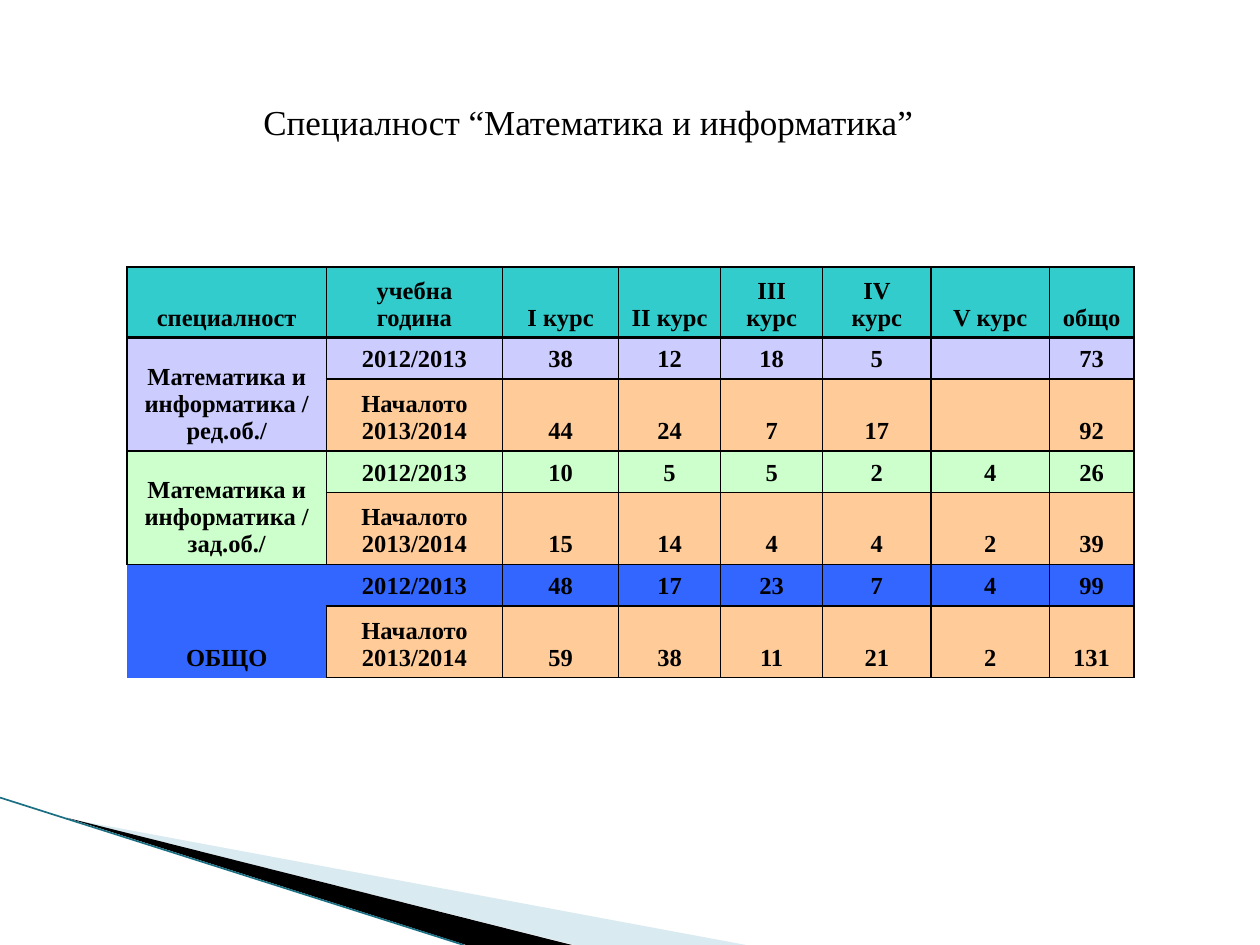
from lxml.etree import SubElement
from pptx import Presentation
from pptx.dml.color import RGBColor
from pptx.enum.text import MSO_ANCHOR as Anchor, PP_ALIGN as Align
from pptx.oxml.ns import qn
from pptx.util import Inches, Pt

BLACK, TEAL, LILAC, GREEN, BLUE, PEACH = (
    "000000", "33CCCC", "CCCCFF", "CCFFCC", "3366FF", "FFCC99")
HEADINGS = ["специалност", "учебна година", "І курс", "ІІ курс",
            "ІІІ курс", "ІV курс", "V курс", "общо"]
LAST_YEAR, THIS_YEAR = "2012/2013", "Началото 2013/2014"
ROWS = [
    HEADINGS,
    ["Математика и информатика /ред.об./", LAST_YEAR, "38", "12", "18", "5", "", "73"],
    ["", THIS_YEAR, "44", "24", "7", "17", "", "92"],
    ["Математика и информатика /зад.об./", LAST_YEAR, "10", "5", "5", "2", "4", "26"],
    ["", THIS_YEAR, "15", "14", "4", "4", "2", "39"],
    ["", LAST_YEAR, "48", "17", "23", "7", "4", "99"],
    ["ОБЩО", THIS_YEAR, "59", "38", "11", "21", "2", "131"],
]
GROUP_FILLS = [LILAC, GREEN, BLUE]
TOTAL_ROW = 5
COLUMN_WIDTHS = [1.58, 1.4, 0.92, 0.81, 0.81, 0.86, 0.94, 0.67]
ROW_HEIGHTS = [0.56] + [0.33, 0.57] * 3


def color(value):
    return RGBColor.from_string(value)


def cell_fill(row, col):
    if row == 0:
        return TEAL
    if row % 2 == 0 and col > 0:
        return PEACH
    return GROUP_FILLS[(row - 1) // 2]


def border_widths(row, col):
    """Widths in points; the label of the total row is open on most sides."""
    if row >= TOTAL_ROW and col == 0:
        top = row == TOTAL_ROW
        return {"L": 0, "R": int(not top), "T": int(top), "B": 0}
    return {"L": int((row, col) != (TOTAL_ROW, 1)), "R": 1,
            "T": 2 if row == 1 else 1, "B": 2 if row == 0 else 1}


class SlideBuilder:
    font_name = "Times New Roman"

    def __init__(self, slide):
        self.slide = slide

    def style(self, paragraph, size, bold, align):
        paragraph.alignment = align
        font = paragraph.font
        font.name, font.size, font.bold = self.font_name, Pt(size), bold
        font.color.rgb = color(BLACK)

    def title(self, text, left, top, width, height):
        title = self.slide.shapes.title
        title.left, title.top = Inches(left), Inches(top)
        title.width, title.height = Inches(width), Inches(height)
        frame = title.text_frame
        frame.text = text
        frame.word_wrap = False
        frame.vertical_anchor = Anchor.TOP
        self.style(frame.paragraphs[0], 20, False, Align.LEFT)

    def polygon(self, points, fill, alpha=100):
        start, *rest = [(Inches(x), Inches(y)) for x, y in points]
        builder = self.slide.shapes.build_freeform(*start)
        builder.add_line_segments(rest, close=True)
        shape = builder.convert_to_shape()
        shape.shadow.inherit = False
        shape.fill.solid()
        shape.fill.fore_color.rgb = color(fill)
        shape.line.fill.background()
        if alpha < 100:
            tint = shape._element.spPr.find(".//" + qn("a:srgbClr"))
            SubElement(tint, qn("a:alpha"), val=str(alpha * 1000))

    def line(self, start, end, stroke, width):
        ends = [Inches(value) for value in (*start, *end)]
        line = self.slide.shapes.add_connector(1, *ends)
        line.line.color.rgb = color(stroke)
        line.line.width = Pt(width)
        SubElement(line._element.spPr, qn("a:effectLst"))

    def borders(self, cell, widths):
        properties = cell._tc.get_or_add_tcPr()
        for side, width in widths.items():
            edge = SubElement(properties, qn("a:ln" + side), w=str(Pt(width)))
            if width:
                fill = SubElement(edge, qn("a:solidFill"))
                SubElement(fill, qn("a:srgbClr"), val=BLACK)
            else:
                SubElement(edge, qn("a:noFill"))

    def cell(self, cell, text, fill, widths):
        self.borders(cell, widths)
        cell.fill.solid()
        cell.fill.fore_color.rgb = color(fill)
        cell.vertical_anchor = Anchor.BOTTOM
        cell.text = text
        paragraph = cell.text_frame.paragraphs[0]
        self.style(paragraph, 14, True, Align.CENTER)
        if not text:  # keeps an empty cell from growing its row
            paragraph._p.get_or_add_endParaRPr().set("sz", "1400")

    def table(self, rows, left, top):
        frame = self.slide.shapes.add_table(
            len(rows), len(rows[0]), Inches(left), Inches(top),
            Inches(sum(COLUMN_WIDTHS)), Inches(sum(ROW_HEIGHTS)))
        table = frame.table
        table.first_row = table.horz_banding = False
        for column, width in zip(table.columns, COLUMN_WIDTHS):
            column.width = Inches(width)
        for row, height in zip(table.rows, ROW_HEIGHTS):
            row.height = Inches(height)
        for r, texts in enumerate(rows):
            for c, text in enumerate(texts):
                self.cell(table.cell(r, c), text, cell_fill(r, c), border_widths(r, c))
        for r in range(1, TOTAL_ROW, 2):
            table.cell(r, 0).merge(table.cell(r + 1, 0))


def main():
    deck = Presentation()
    deck.slide_width, deck.slide_height = Inches(10), Inches(7.5)
    builder = SlideBuilder(deck.slides.add_slide(deck.slide_layouts[5]))
    builder.polygon([(0.55, 6.5), (5.92, 7.5), (4.56, 7.5)], "A0CBDC", alpha=40)
    builder.polygon([(0.53, 6.49), (4.54, 7.5), (3.7, 7.5)], BLACK)
    builder.line((0, 6.33), (3.68, 7.5), "1B6F83", 0.95)
    builder.title("Специалност “Математика и информатика”", 1.99, 0.75, 5.84, 0.43)
    builder.table(ROWS, 1.01, 2.12)
    deck.save("out.pptx")


if __name__ == "__main__":
    main()
